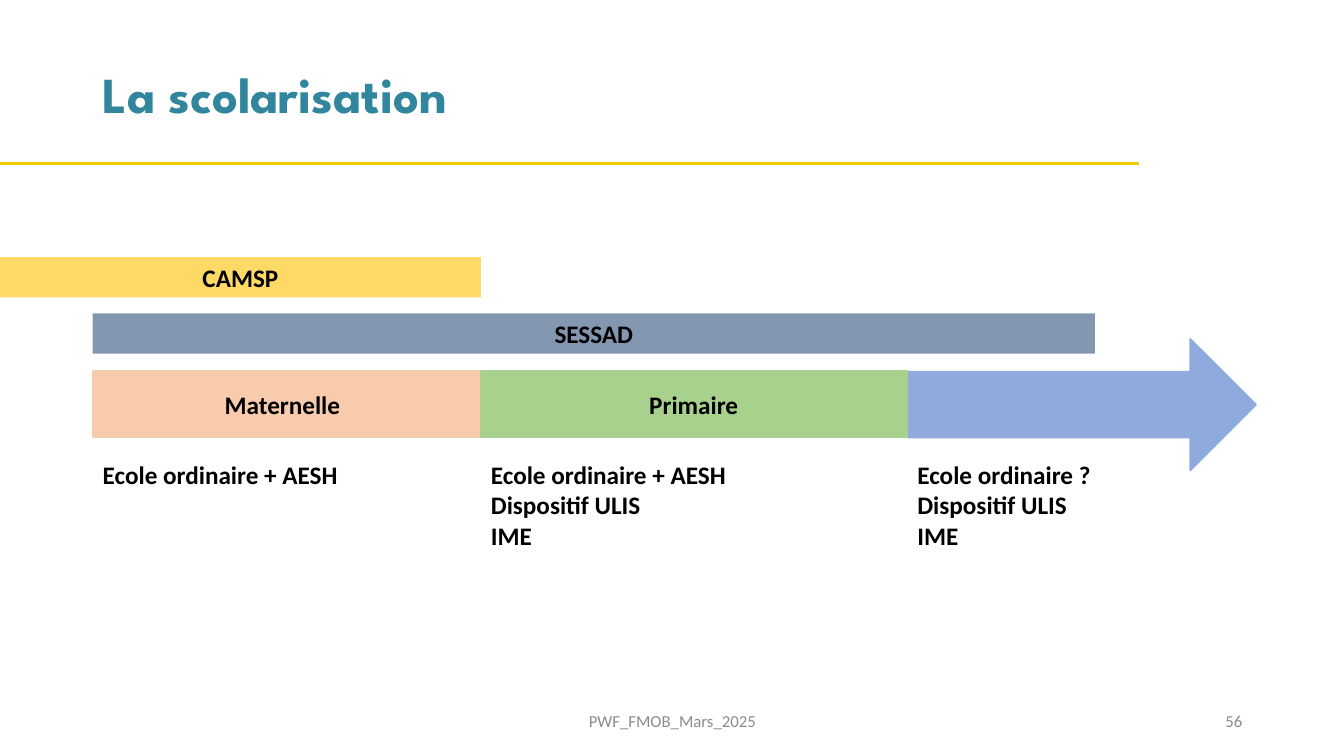
from dataclasses import dataclass

import pptx
import pptx.dml.color
import pptx.enum.shapes
import pptx.enum.text
import pptx.oxml
import pptx.util
from pptx.util import Inches

Align = pptx.enum.text.PP_ALIGN
Anchor = pptx.enum.text.MSO_ANCHOR
Shape = pptx.enum.shapes.MSO_SHAPE
Rgb = pptx.dml.color.RGBColor.from_string


@dataclass(frozen=True)
class Theme:
    title: str = "31859C"
    rule: str = "F1CB00"
    text: str = "000000"
    foot: str = "8C8C8C"
    camsp: str = "FFD966"
    sessad: str = "8497B0"
    nursery: str = "F8CBAD"
    primary: str = "A9D18E"
    arrow: str = "8FAADC"
    head_font: str = "League Spartan"
    body_font: str = "Calibri"
    head_size: int = 36
    body_size: int = 18
    foot_size: int = 12


@dataclass(frozen=True)
class Box:
    left: float
    top: float
    width: float
    height: float


@dataclass(frozen=True)
class Bar:
    box: Box
    fill: str
    text: str = ""
    edge: bool = False
    kind: int = Shape.RECTANGLE


@dataclass(frozen=True)
class Label:
    box: Box
    lines: tuple[str, ...]


THEME = Theme()
START, MIDDLE, LAST = 0.92, 4.77, 9
ROW, ROW_HEIGHT = 3.68, 0.66
LINE, PAD = 0.3, 0.1
NOTE_TOP, NOTE_WIDTH = 4.51, 3.85

BARS = (
    Bar(Box(LAST, 3.36, 3.46, 1.31), THEME.arrow, edge=True, kind=Shape.RIGHT_ARROW),
    Bar(Box(START, ROW, MIDDLE - START, ROW_HEIGHT), THEME.nursery, edge=True),
    Bar(Box(MIDDLE, ROW, LAST - MIDDLE, ROW_HEIGHT), THEME.primary, edge=True),
    Bar(Box(0, 2.55, MIDDLE, 0.4), THEME.camsp, "CAMSP"),
    Bar(Box(START, 3.11, 9.94, 0.4), THEME.sessad, "SESSAD"),
)
STAGES = (
    Label(Box(2.13, 3.81, 1.43, 0.4), ("Maternelle",)),
    Label(Box(6.34, 3.81, 1.09, 0.4), ("Primaire",)),
)
OPTIONS = (
    (START, ("Ecole ordinaire + AESH",)),
    (MIDDLE, ("Ecole ordinaire + AESH", "Dispositif ULIS", "IME")),
    (LAST, ("Ecole ordinaire ?", "Dispositif ULIS", "IME")),
)
NOTES = tuple(
    Label(Box(left, NOTE_TOP, NOTE_WIDTH, PAD + LINE * len(lines)), lines)
    for left, lines in OPTIONS
)


def place(box: Box) -> tuple[int, int, int, int]:
    return Inches(box.left), Inches(box.top), Inches(box.width), Inches(box.height)


def write(frame, *lines: str, size: int = THEME.body_size, font: str = THEME.body_font,
          color: str = THEME.text, bold: bool = True, align=Align.LEFT,
          anchor=Anchor.TOP, spacing: float = 1.0) -> None:
    """Fill a text frame with one paragraph per line."""
    frame.word_wrap = True
    frame.vertical_anchor = anchor
    for index, line in enumerate(lines):
        para = frame.paragraphs[0] if index == 0 else frame.add_paragraph()
        para.alignment = align
        para.line_spacing = spacing
        run = para.add_run()
        run.text = line
        run.font.size = pptx.util.Pt(size)
        run.font.name = font
        run.font.bold = bold
        run.font.color.rgb = Rgb(color)


def add_text(slide, box: Box, *lines: str, **style) -> None:
    write(slide.shapes.add_textbox(*place(box)).text_frame, *lines, **style)


def add_bar(slide, bar: Bar) -> None:
    shape = slide.shapes.add_shape(bar.kind, *place(bar.box))
    shape.shadow.inherit = False
    shape.fill.solid()
    shape.fill.fore_color.rgb = Rgb(bar.fill)
    if bar.edge:
        shape.line.color.rgb = Rgb(bar.fill)
        shape.line.width = pptx.util.Pt(1)
    else:
        shape.line.fill.background()
    if bar.text:
        write(shape.text_frame, bar.text, align=Align.CENTER, anchor=Anchor.MIDDLE)


def add_rule(slide) -> None:
    rule = slide.shapes.add_connector(
        pptx.enum.shapes.MSO_CONNECTOR.STRAIGHT,
        Inches(0), Inches(1.62), Inches(11.3), Inches(1.62))
    rule.line.color.rgb = Rgb(THEME.rule)
    rule.line.width = pptx.util.Pt(2.25)
    props = rule._element.spPr
    props.append(props.makeelement(pptx.oxml.ns.qn("a:effectLst"), {}))


def add_foot(slide, box: Box, text: str, align) -> None:
    add_text(slide, box, text, size=THEME.foot_size, color=THEME.foot,
             bold=False, align=align, anchor=Anchor.MIDDLE)


def main() -> None:
    deck = pptx.Presentation()
    deck.slide_width, deck.slide_height = Inches(13.33), Inches(7.5)
    slide = deck.slides.add_slide(deck.slide_layouts[6])
    add_rule(slide)
    add_text(slide, Box(START, 0.4, 11.5, 1.13), "La scolarisation",
             size=THEME.head_size, font=THEME.head_font, color=THEME.title,
             anchor=Anchor.MIDDLE, spacing=0.9)
    for bar in BARS:
        add_bar(slide, bar)
    for label in STAGES + NOTES:
        add_text(slide, label.box, *label.lines)
    add_foot(slide, Box(4.42, 6.95, 4.5, 0.4), "PWF_FMOB_Mars_2025", Align.CENTER)
    add_foot(slide, Box(9.42, 6.95, 3, 0.4), "56", Align.RIGHT)
    deck.save("out.pptx")


if __name__ == "__main__":
    main()
